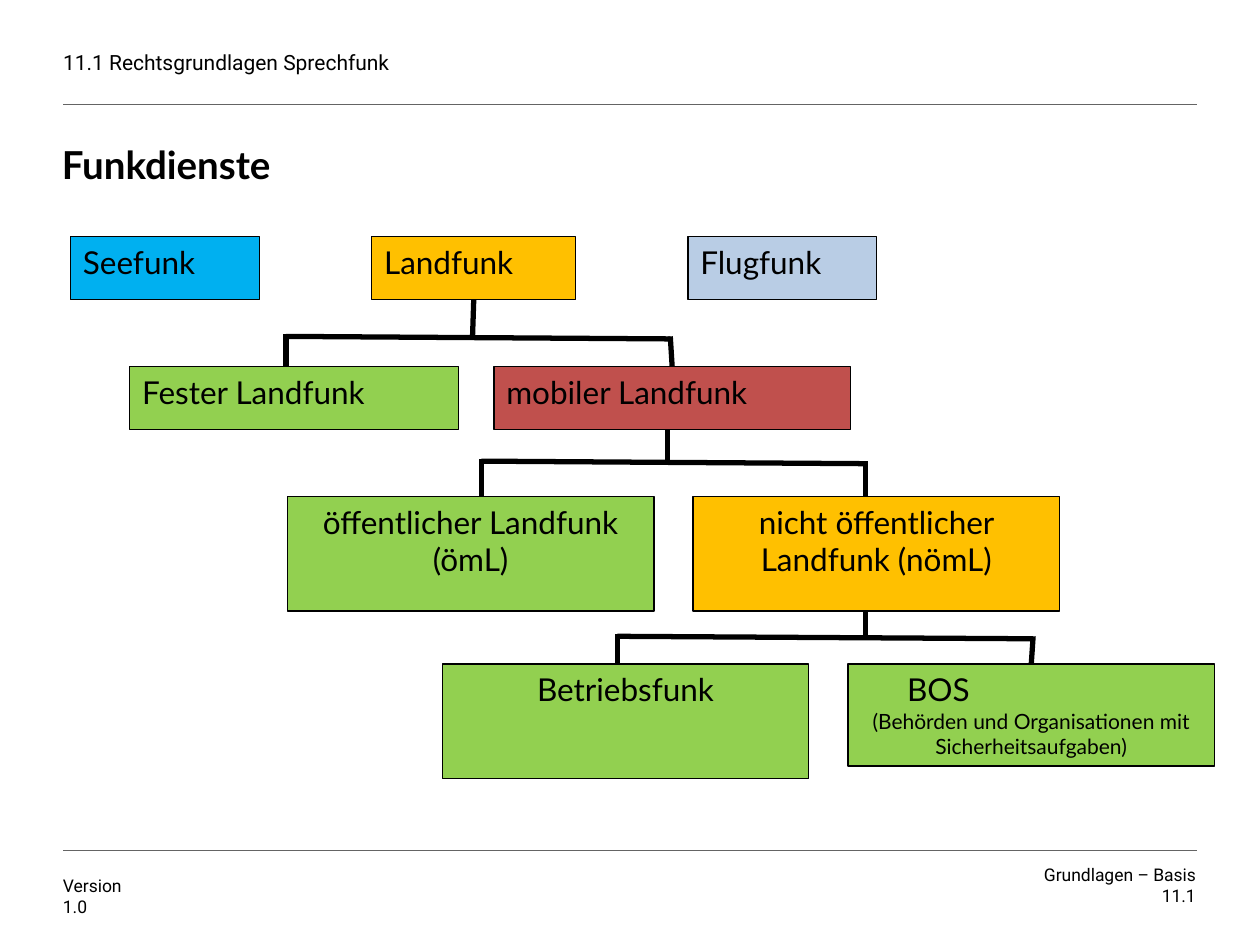
import pptx
import pptx.util
import pptx.dml.color
import pptx.enum.shapes
import pptx.enum.text
import lxml.etree

ALIGN = pptx.enum.text.PP_ALIGN
ANCHOR = pptx.enum.text.MSO_ANCHOR
INCH = pptx.util.Inches
WIDE, HIGH, EDGE = 10, 7.5, 0.5
TOP, STEP = 1.88, 1.03
ROWS = [TOP, TOP + STEP, TOP + 2 * STEP, 5.27]
TILT = 0.02

COLORS = {"black": "000000", "grey": "646464", "blue": "00B0F0", "gold": "FFC000",
          "pale": "B9CDE5", "green": "92D050", "red": "C0504D"}
BODY = {"name": "Lato", "size": pptx.util.Pt(18)}
SMALL = {"name": "Lato", "size": pptx.util.Pt(12)}
HEAD = {"name": "Roboto", "size": pptx.util.Pt(12)}
FOOT = {"name": "Roboto", "size": pptx.util.Pt(10)}
TITLE = {"name": "Lato", "size": pptx.util.Pt(22), "bold": True}

BOXES = [
    ("Seefunk", 0, 0.56, 1.5, 0.5, "blue", ALIGN.LEFT),
    ("Landfunk", 0, 2.95, 1.62, 0.5, "gold", ALIGN.LEFT),
    ("Flugfunk", 0, 5.46, 1.5, 0.5, "pale", ALIGN.LEFT),
    ("Fester Landfunk", 1, 1.03, 2.61, 0.5, "green", ALIGN.LEFT),
    ("mobiler Landfunk", 1, 3.92, 2.83, 0.5, "red", ALIGN.LEFT),
    ("öffentlicher Landfunk (ömL)", 2, 2.28, 2.91, 0.91, "green", ALIGN.CENTER),
    ("nicht öffentlicher Landfunk (nömL)", 2, 5.5, 2.91, 0.91, "gold", ALIGN.CENTER),
    ("Betriebsfunk", 3, 3.51, 2.91, 0.91, "green", ALIGN.CENTER),
    ("BOS", 3, 6.73, 2.91, 0.81, "green", ALIGN.LEFT),
]
NOTE = "(Behörden und Organisationen mit Sicherheitsaufgaben)"
FORKS = [
    ("Landfunk", 3.75, 2.67, ("Fester Landfunk", 2.27), ("mobiler Landfunk", 5.32)),
    ("mobiler Landfunk", 5.3, 3.66, ("öffentlicher Landfunk (ömL)", 3.82),
     ("nicht öffentlicher Landfunk (nömL)", 6.87)),
    ("nicht öffentlicher Landfunk (nömL)", 6.87, 5.05, ("Betriebsfunk", 4.9), ("BOS", 8.2)),
]
LABELS = [
    (["11.1 Rechtsgrundlagen Sprechfunk"], EDGE, 0.33, 6.08, 0.33, HEAD, ALIGN.LEFT, ANCHOR.MIDDLE),
    (["Version", "1.0"], EDGE, 6.89, 0.56, 0.44, FOOT, ALIGN.LEFT, ANCHOR.MIDDLE),
    (["Grundlagen – Basis 11.1"], 8.07, 6.86, 1.42, 0.44, FOOT, ALIGN.RIGHT, ANCHOR.TOP),
]


def tint(name):
    return pptx.dml.color.RGBColor.from_string(COLORS[name])


def style(para, form, align):
    para.alignment = align
    for key, value in form.items():
        setattr(para.font, key, value)
    para.font.color.rgb = tint("black")


def fill(frame, texts, form, align, anchor, inset=None):
    frame.word_wrap = True
    frame.vertical_anchor = anchor
    if inset is not None:
        for side in ("left", "top", "right", "bottom"):
            setattr(frame, "margin_" + side, inset)
    for num, text in enumerate(texts):
        para = frame.add_paragraph() if num else frame.paragraphs[0]
        para.text = text
        style(para, form, align)


def rule(slide, x, y, end_x, end_y, color="black", weight=3):
    line = slide.shapes.add_connector(pptx.enum.shapes.MSO_CONNECTOR.STRAIGHT,
                                      *map(INCH, (x, y, end_x, end_y)))
    line.line.color.rgb = tint(color)
    line.line.width = pptx.util.Pt(weight)
    lxml.etree.SubElement(line._element.spPr, pptx.oxml.ns.qn("a:effectLst"))
    return line


def leg(slide, box, site, x, bar):
    side = box.top + (box.height if site == 2 else 0)
    line = rule(slide, x, side / INCH(1), x, bar)
    if abs(box.left + box.width / 2 - INCH(x)) < INCH(0.03):
        line.begin_connect(box, site)


def main():
    deck = pptx.Presentation()
    deck.slide_width, deck.slide_height = INCH(WIDE), INCH(HIGH)
    slide = deck.slides.add_slide(deck.slide_layouts[5])

    title = slide.shapes.title
    for key, value in {"left": 0.49, "top": 1.15, "width": 7.17, "height": 0.67}.items():
        setattr(title, key, INCH(value))
    fill(title.text_frame, ["Funkdienste"], TITLE, ALIGN.LEFT, ANCHOR.TOP, 0)
    title.text_frame.auto_size = pptx.enum.text.MSO_AUTO_SIZE.NONE
    title.text_frame.paragraphs[0].line_spacing = pptx.util.Pt(24)

    for y in (0.83, 6.75):
        rule(slide, EDGE, y, WIDE - EDGE, y, "grey", 0.25)
    for texts, x, y, wide, high, form, align, anchor in LABELS:
        label = slide.shapes.add_textbox(*map(INCH, (x, y, wide, high)))
        fill(label.text_frame, texts, form, align, anchor, 0)

    boxes = {}
    for text, row, x, wide, high, color, align in BOXES:
        box = slide.shapes.add_shape(pptx.enum.shapes.MSO_SHAPE.RECTANGLE,
                                     *map(INCH, (x, ROWS[row], wide, high)))
        box.shadow.inherit = False
        box.fill.solid()
        box.fill.fore_color.rgb = tint(color)
        box.line.color.rgb = tint("black")
        box.line.width = pptx.util.Pt(0.75)
        fill(box.text_frame, [text], BODY, align, ANCHOR.TOP)
        boxes[text] = box

    frame = boxes["BOS"].text_frame
    frame.paragraphs[0]._p.get_or_add_pPr().set("indent", str(INCH(0.37)))
    note = frame.add_paragraph()
    note.text = NOTE
    style(note, SMALL, ALIGN.CENTER)

    for head, stem, bar, left, right in FORKS:
        leg(slide, boxes[head], 2, stem, bar + TILT / 2)
        rule(slide, left[1], bar, right[1], bar + TILT)
        for (name, x), y in ((left, bar), (right, bar + TILT)):
            leg(slide, boxes[name], 0, x, y - 0.02)

    deck.save("out.pptx")


if __name__ == "__main__":
    main()
